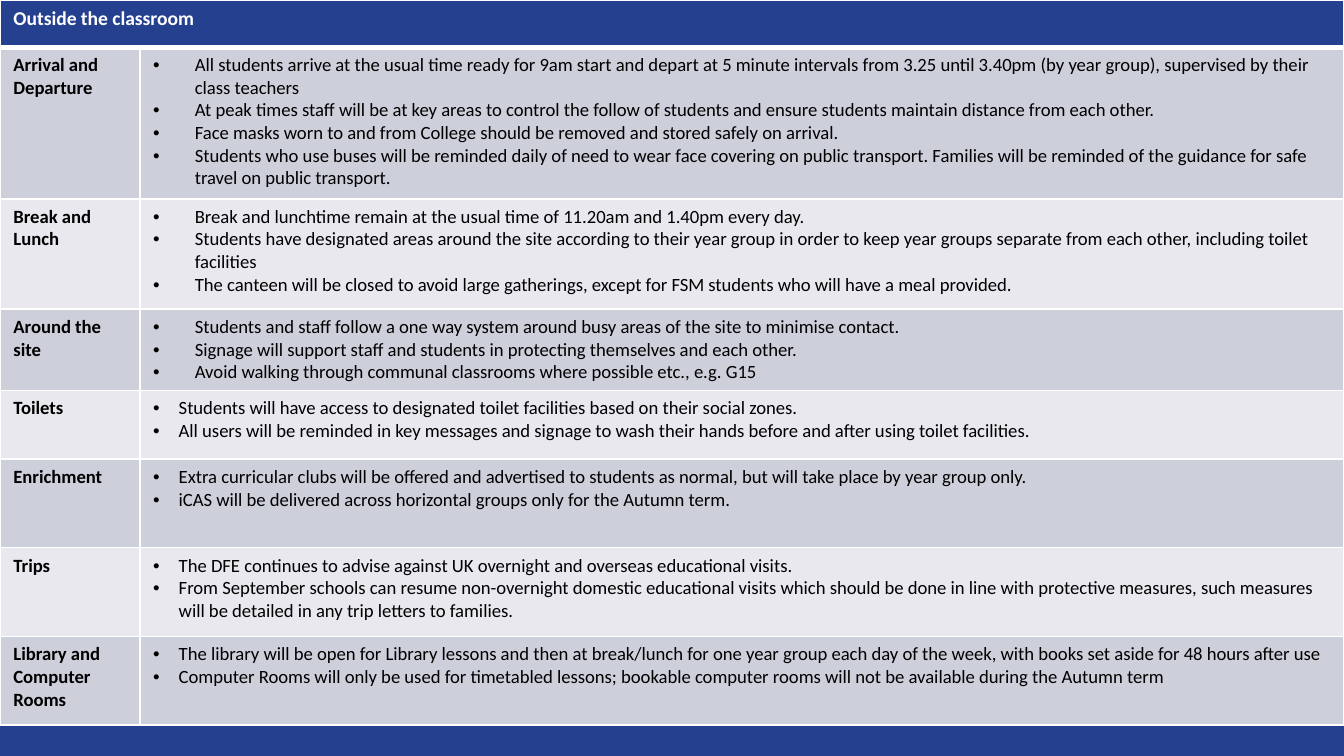
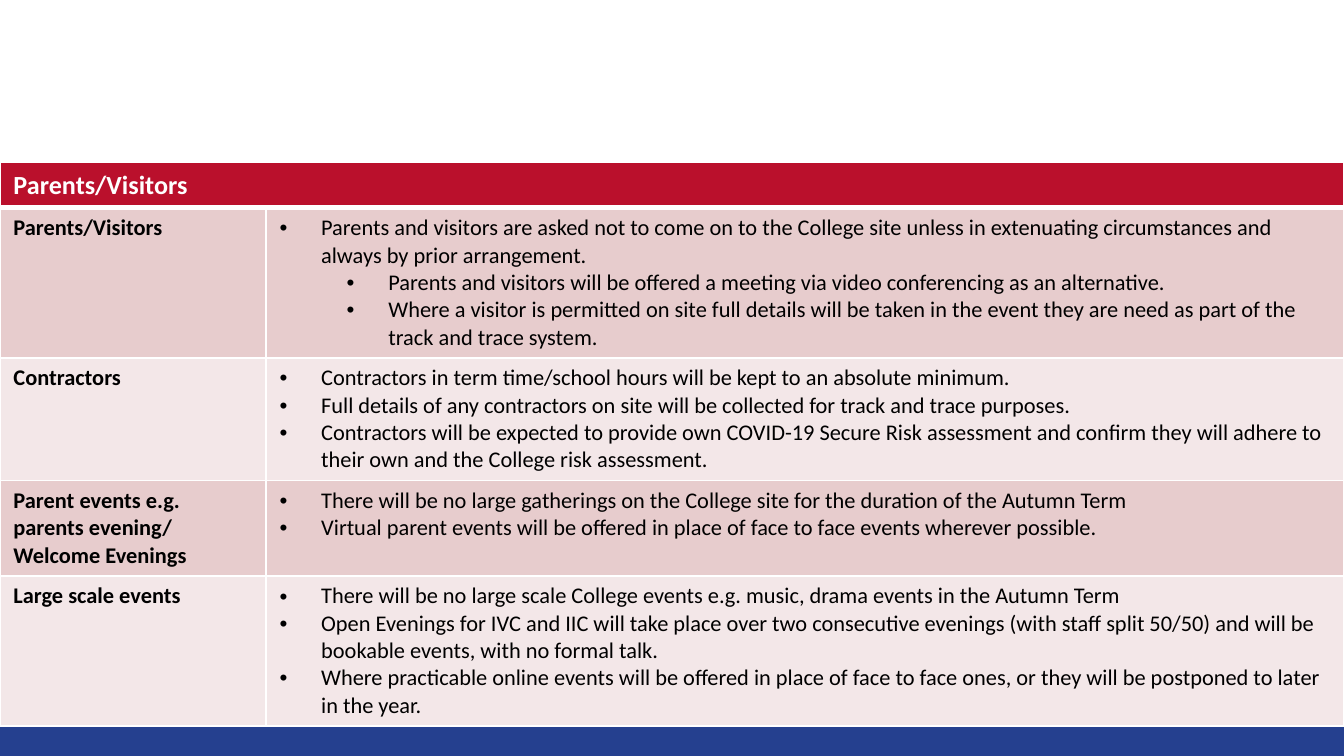
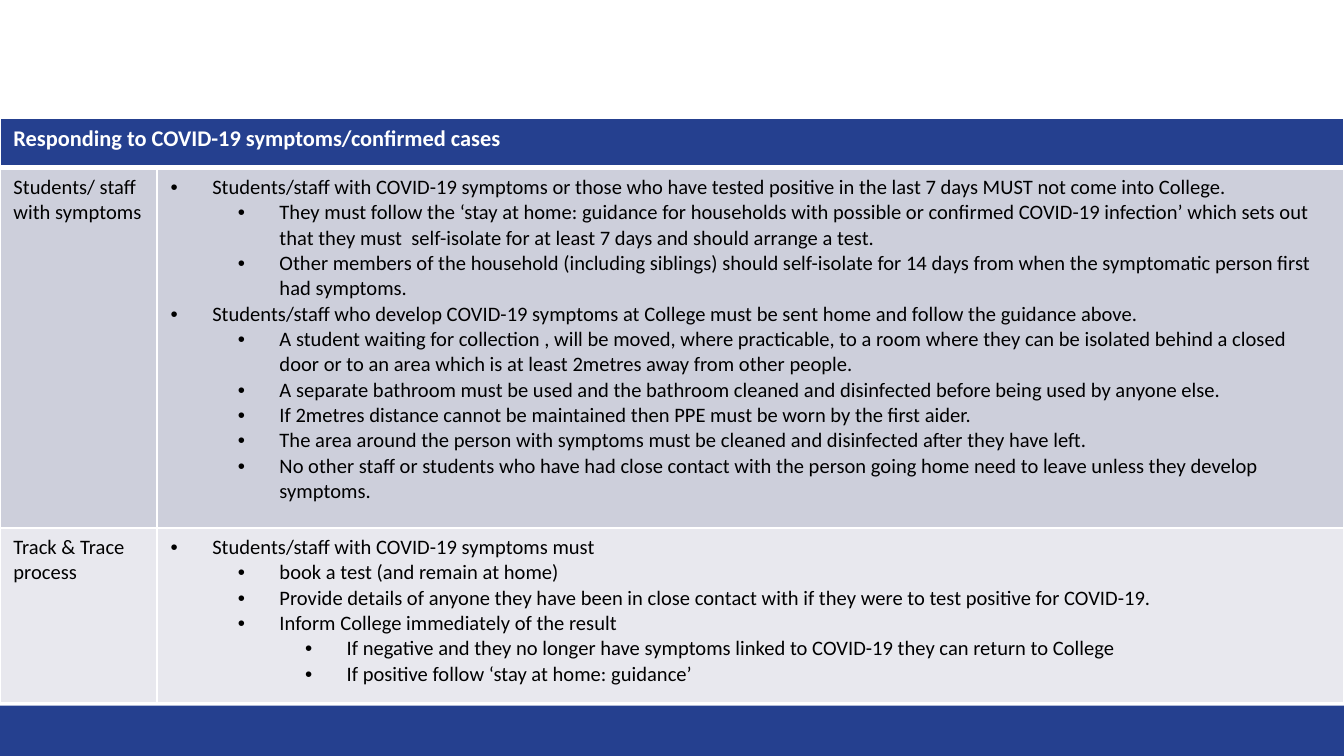
from dataclasses import dataclass
from typing import NamedTuple

from lxml.etree import SubElement
from pptx import Presentation
from pptx.dml.color import RGBColor as Rgb
from pptx.enum.shapes import MSO_SHAPE as Preset
from pptx.oxml import parse_xml
from pptx.oxml.ns import nsdecls, qn
from pptx.util import Inches, Pt

COLORS = {
    "navy": "25408F", "navy_dark": "CDCFDB", "navy_light": "E8E8EE",
    "red": "BA102C", "red_dark": "E7CCCD", "red_light": "F3E7E8",
    "black": "000000", "white": "FFFFFF",
}
FONT = "Calibri"
SLIDE_W = Inches(10)
SLIDE_H = SLIDE_W * 9 // 16
UNIT = SLIDE_W // 100  # grid step: one percent of the slide width
BAND_TOP, BAND_HEIGHT = 52.5, 4
LEVEL_STEP = Inches(0.5)
WIDE_HANG, NARROW_HANG = 0.31, 0.19


class Point(NamedTuple):
    text: str
    level: int = 0


class Topic(NamedTuple):
    label: str
    height: float
    points: list[Point]
    hang: float = WIDE_HANG


@dataclass
class Policy:
    """One slide's table; lengths are in grid units, text sizes in points."""
    heading: str
    topics: list[Topic]
    top: float
    height: float
    label_width: float
    heading_height: float
    heading_size: float
    body_size: float
    theme: str = "navy"
    bold_labels: bool = True


POLICIES = [
    Policy(
        "Outside the classroom",
        [
            Topic("Arrival and Departure", 11.3, [
                Point("All students arrive at the usual time ready for 9am start and depart at 5 minute "
                      "intervals from 3.25 until 3.40pm (by year group), supervised by their class teachers"),
                Point("At peak times staff will be at key areas to control the follow of students and "
                      "ensure students maintain distance from each other."),
                Point("Face masks worn to and from College should be removed and stored safely on arrival."),
                Point("Students who use buses will be reminded daily of need to wear face covering on public "
                      "transport. Families will be reminded of the guidance for safe travel on public "
                      "transport."),
            ]),
            Topic("Break and Lunch", 8.2, [
                Point("Break and lunchtime remain at the usual time of 11.20am and 1.40pm every day."),
                Point("Students have designated areas around the site according to their year group in order "
                      "to keep year groups separate from each other, including toilet facilities"),
                Point("The canteen will be closed to avoid large gatherings, except for FSM students who "
                      "will have a meal provided."),
            ]),
            Topic("Around the site", 5.9, [
                Point("Students and staff follow a one way system around busy areas of the site to "
                      "minimise contact."),
                Point("Signage will support staff and students in protecting themselves and each other."),
                Point("Avoid walking through communal classrooms where possible etc., e.g. G15"),
            ]),
            Topic("Toilets", 5.1, [
                Point("Students will have access to designated toilet facilities based on their social zones."),
                Point("All users will be reminded in key messages and signage to wash their hands before and "
                      "after using toilet facilities."),
            ], NARROW_HANG),
            Topic("Enrichment", 6.6, [
                Point("Extra curricular clubs will be offered and advertised to students as normal, but will "
                      "take place by year group only."),
                Point("iCAS will be delivered across horizontal groups only for the Autumn term."),
            ], NARROW_HANG),
            Topic("Trips", 6.6, [
                Point("The DFE continues to advise against UK overnight and overseas educational visits."),
                Point("From September schools can resume non-overnight domestic educational visits which "
                      "should be done in line with protective measures, such measures will be detailed in "
                      "any trip letters to families."),
            ], NARROW_HANG),
            Topic("Library and Computer Rooms", 6.6, [
                Point("The library will be open for Library lessons and then at break/lunch for one year "
                      "group each day of the week, with books set aside for 48 hours after use"),
                Point("Computer Rooms will only be used for timetabled lessons; bookable computer rooms will "
                      "not be available during the Autumn term"),
            ], NARROW_HANG),
        ],
        top=0, height=54, label_width=10.4, heading_height=3.5, heading_size=10.5, body_size=10,
    ),
    Policy(
        "Parents/Visitors",
        [
            Topic("Parents/Visitors", 4.6, [
                Point("Parents and visitors are asked not to come on to the College site unless in "
                      "extenuating circumstances and always by prior arrangement."),
                Point("Parents and visitors will be offered a meeting via video conferencing as an "
                      "alternative.", 1),
                Point("Where a visitor is permitted on site full details will be taken in the event they "
                      "are need as part of the track and trace system.", 1),
            ]),
            Topic("Contractors", 6.5, [
                Point("Contractors in term time/school hours will be kept to an absolute minimum."),
                Point("Full details of any contractors on site will be collected for track and trace "
                      "purposes."),
                Point("Contractors will be expected to provide own COVID-19 Secure Risk assessment and "
                      "confirm they will adhere to their own and the College risk assessment."),
            ]),
            Topic("Parent events e.g. parents evening/ Welcome Evenings", 5.2, [
                Point("There will be no large gatherings on the College site for the duration of the "
                      "Autumn Term"),
                Point("Virtual parent events will be offered in place of face to face events wherever "
                      "possible."),
            ]),
            Topic("Large scale events", 7.8, [
                Point("There will be no large scale College events e.g. music, drama events in the "
                      "Autumn Term"),
                Point("Open Evenings for IVC and IIC will take place over two consecutive evenings (with "
                      "staff split 50/50) and will be bookable events, with no formal talk."),
                Point("Where practicable online events will be offered in place of face to face ones, or "
                      "they will be postponed to later in the year."),
            ]),
        ],
        top=12.1, height=41.3, label_width=19.8, heading_height=3.2, heading_size=14, body_size=12,
        theme="red",
    ),
    Policy(
        "Responding to COVID-19 symptoms/confirmed cases",
        [
            Topic("Students/ staff with symptoms", 26.8, [
                Point("Students/staff with COVID-19 symptoms or those who have tested positive in the last "
                      "7 days MUST not come into College."),
                Point("They must follow the ‘stay at home: guidance for households with possible or "
                      "confirmed COVID-19 infection’ which sets out that they must  self-isolate for at "
                      "least 7 days and should arrange a test.", 1),
                Point("Other members of the household (including siblings) should self-isolate for 14 days "
                      "from when the symptomatic person first had symptoms.", 1),
                Point("Students/staff who develop COVID-19 symptoms at College must be sent home and follow "
                      "the guidance above."),
                Point("A student waiting for collection , will be moved, where practicable, to a room where "
                      "they can be isolated behind a closed door or to an area which is at least 2metres "
                      "away from other people.", 1),
                Point("A separate bathroom must be used and the bathroom cleaned and disinfected before "
                      "being used by anyone else.", 1),
                Point("If 2metres distance cannot be maintained then PPE must be worn by the first aider.", 1),
                Point("The area around the person with symptoms must be cleaned and disinfected after they "
                      "have left.", 1),
                Point("No other staff or students who have had close contact with the person going home "
                      "need to leave unless they develop symptoms.", 1),
            ]),
            Topic("Track & Trace process", 13, [
                Point("Students/staff with COVID-19 symptoms must"),
                Point("book a test (and remain at home)", 1),
                Point("Provide details of anyone they have been in close contact with if they were to test "
                      "positive for COVID-19.", 1),
                Point("Inform College immediately of the result", 1),
                Point("If negative and they no longer have symptoms linked to COVID-19 they can return to "
                      "College", 2),
                Point("If positive follow ‘stay at home: guidance’", 2),
            ]),
        ],
        top=8.8, height=43.6, label_width=11.7, heading_height=3.7, heading_size=12, body_size=11,
        bold_labels=False,
    ),
]


def grid(units: float) -> int:
    return round(units * UNIT)


def rgb(color: str) -> Rgb:
    return Rgb.from_string(COLORS[color])


def write(paragraph, text: str, size: float, bold: bool = False, color: str = "black") -> None:
    run = paragraph.add_run()
    run.text = text
    for name, value in {"name": FONT, "size": Pt(size), "bold": bold}.items():
        setattr(run.font, name, value)
    run.font.color.rgb = rgb(color)


def add_bullet(paragraph, level: int, hang: float) -> None:
    paragraph.level = level
    properties = paragraph._p.get_or_add_pPr()
    properties.set("marL", str(Inches(hang) + level * LEVEL_STEP))
    properties.set("indent", str(-Inches(hang)))
    SubElement(properties, qn("a:buFont"), typeface="Arial")
    SubElement(properties, qn("a:buChar"), char="•")


def style_cell(cell, color: str, top: float = 1, bottom: float = 1) -> None:
    """Fill a cell and rule its sides in white; top and bottom are points."""
    cell.fill.solid()
    cell.fill.fore_color.rgb = rgb(color)
    sides = {"lnL": 1, "lnR": 1, "lnT": top, "lnB": bottom}
    for position, (side, width) in enumerate(sides.items()):
        rule = parse_xml(
            f'<a:{side} {nsdecls("a")} w="{Pt(width)}"><a:solidFill>'
            f'<a:srgbClr val="{COLORS["white"]}"/></a:solidFill></a:{side}>')
        cell._tc.get_or_add_tcPr().insert(position, rule)


def fill_topic(label_cell, points_cell, topic: Topic, policy: Policy) -> None:
    write(label_cell.text_frame.paragraphs[0], topic.label, policy.body_size, policy.bold_labels)
    frame = points_cell.text_frame
    for index, point in enumerate(topic.points):
        paragraph = frame.add_paragraph() if index else frame.paragraphs[0]
        add_bullet(paragraph, point.level, topic.hang)
        write(paragraph, point.text, policy.body_size)


def add_policy(slide, policy: Policy) -> None:
    holder = slide.shapes.add_table(
        len(policy.topics) + 1, 2, 0, grid(policy.top), SLIDE_W, grid(policy.height))
    table = holder.table
    table.first_row = table.horz_banding = False
    for column, width in zip(table.columns, (policy.label_width, 100 - policy.label_width)):
        column.width = grid(width)
    heights = [policy.heading_height] + [topic.height for topic in policy.topics]
    for row, height in zip(table.rows, heights):
        row.height = grid(height)
    holder.height = grid(policy.height)

    heading = table.cell(0, 0)
    heading.merge(table.cell(0, 1))
    write(heading.text_frame.paragraphs[0], policy.heading, policy.heading_size, True, "white")
    for column in range(2):
        style_cell(table.cell(0, column), policy.theme, bottom=3)
    for number, topic in enumerate(policy.topics, start=1):
        cells = [table.cell(number, column) for column in range(2)]
        shade = "dark" if number % 2 else "light"
        for cell in cells:
            style_cell(cell, f"{policy.theme}_{shade}", top=3 if number == 1 else 1)
        fill_topic(*cells, topic, policy)


def add_master_band(deck, slide) -> None:
    """Draw the footer band, then move it to the master so every slide shows it."""
    band = slide.shapes.add_shape(
        Preset.RECTANGLE, 0, grid(BAND_TOP), SLIDE_W, grid(BAND_HEIGHT))
    band.shadow.inherit = False
    band.fill.solid()
    band.fill.fore_color.rgb = rgb("navy")
    band.line.fill.background()
    deck.slide_master.shapes.element.append(band.element)


def main() -> None:
    deck = Presentation()
    deck.slide_width, deck.slide_height = SLIDE_W, SLIDE_H
    blank = deck.slide_layouts[6]
    slides = [deck.slides.add_slide(blank) for _ in POLICIES]
    add_master_band(deck, slides[0])
    for slide, policy in zip(slides, POLICIES):
        add_policy(slide, policy)
    deck.save("out.pptx")


if __name__ == "__main__":
    main()
